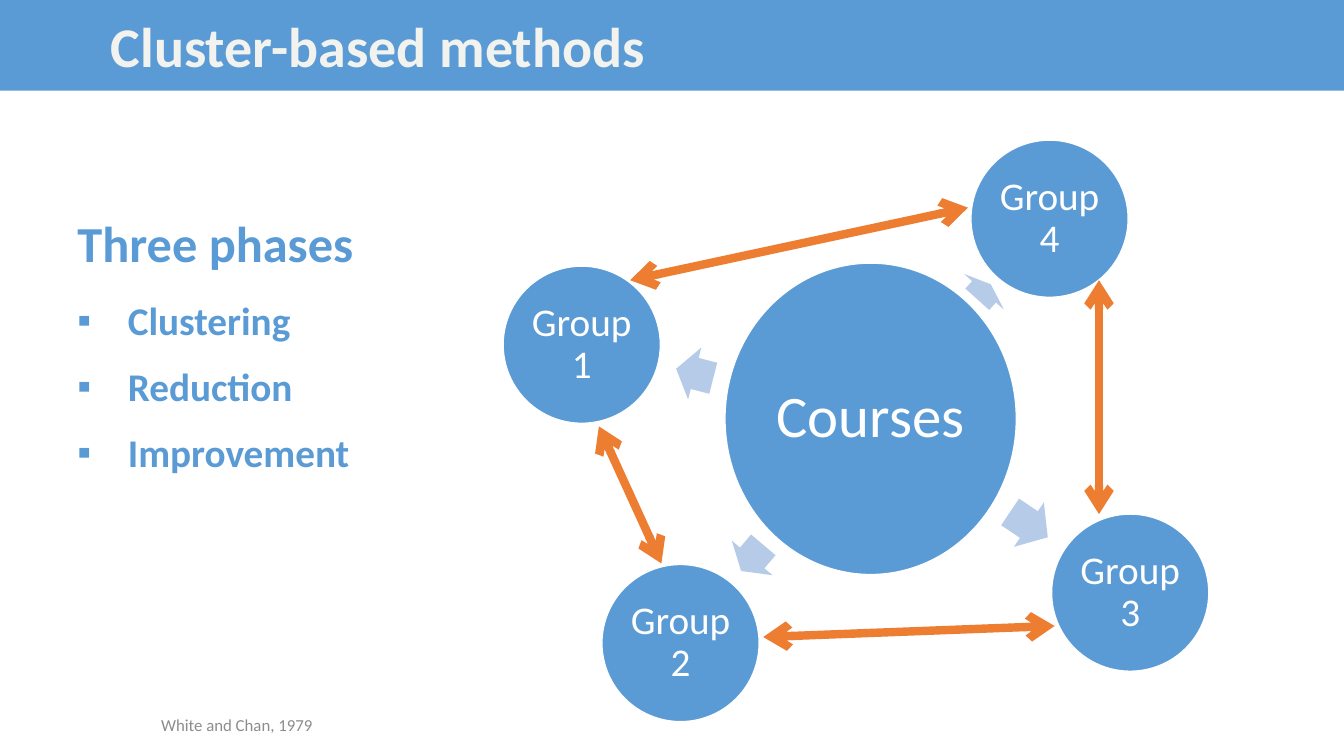
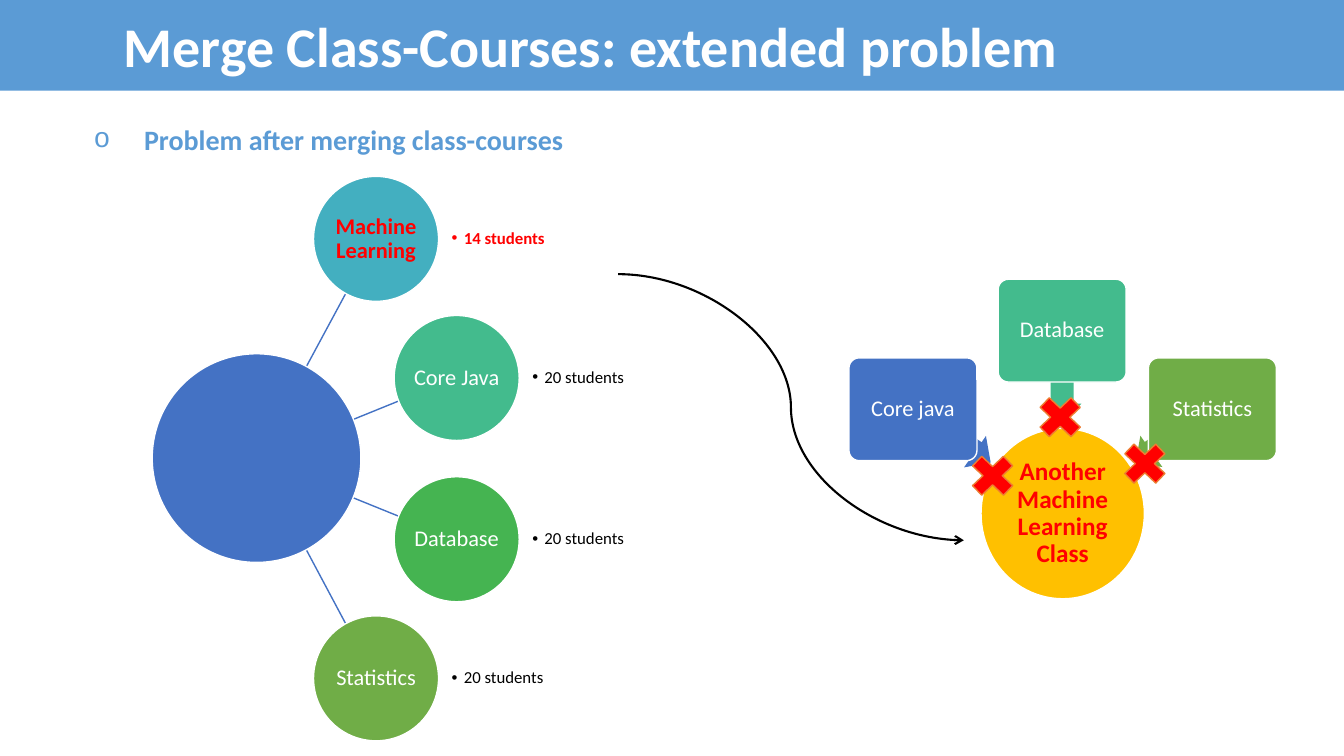
import pptx
import pptx.util
import pptx.dml.color
import pptx.enum.shapes
import pptx.enum.text
import pptx.oxml
import pptx.oxml.ns

Inches, Pt = pptx.util.Inches, pptx.util.Pt
RGB = pptx.dml.color.RGBColor.from_string
SHAPE = pptx.enum.shapes.MSO_SHAPE
CONNECTOR = pptx.enum.shapes.MSO_CONNECTOR
ALIGN = pptx.enum.text.PP_ALIGN
ANCHOR = pptx.enum.text.MSO_ANCHOR


class Theme:
    font = "Calibri"
    # Colours
    blue, pale_blue, royal = "5B9BD5", "B5CBE7", "4472C4"
    teal, mint, green, olive = "43AFC0", "43BB8D", "45B451", "70AD47"
    orange, gold, red = "ED7D31", "FFC000", "FF0000"
    white, off_white, gray, black = "FFFFFF", "F2F2EF", "8C8C8C", "000000"
    # Type sizes
    title, hub, heading, body = 40, 42, 36, 28
    subhead, strong, label, note = 20, 18, 16, 12


def add_block(s, kind, box, text="", size=Theme.label, color=Theme.white, bold=False,
              fill=None, line=None, inset=(0.1, 0.05), align=ALIGN.LEFT,
              anchor=ANCHOR.MIDDLE, spacing=1, after=0, bullet=None, rotation=0, adj=()):
    """Add a shape, or a text box when kind is None; bullet is (char, font, indent)."""
    box = [Inches(v) for v in box]
    if kind is None:
        sp = s.shapes.add_textbox(*box)
    else:
        sp = s.shapes.add_shape(kind, *box)
        sp.shadow.inherit = False
        sp.fill.solid()
        sp.fill.fore_color.rgb = RGB(fill)
        if line:
            sp.line.color.rgb = RGB(line)
            sp.line.width = Pt(1)
        else:
            sp.line.fill.background()
        for i, value in enumerate(adj):
            sp.adjustments[i] = value
    sp.rotation = rotation
    if not text:
        return sp
    tf = sp.text_frame
    tf.word_wrap = True
    tf.vertical_anchor = anchor
    tf.margin_left = tf.margin_right = Inches(inset[0])
    tf.margin_top = tf.margin_bottom = Inches(inset[1])
    tf.text = text
    for p in tf.paragraphs:
        p.alignment = align
        p.line_spacing = spacing
        p.space_after = Pt(after)
        for r in p.runs:
            r.font.name, r.font.size, r.font.bold = Theme.font, Pt(size), bold
            r.font.color.rgb = RGB(color)
        if bullet:
            char, font, indent = bullet
            pPr = p._p.get_or_add_pPr()
            pPr.set("marL", str(Inches(indent)))
            pPr.set("indent", str(-Inches(indent)))
            for tag, key, value in (("a:buFont", "typeface", font), ("a:buChar", "char", char)):
                el = pptx.oxml.ns.qn(tag)
                pPr.append(pPr.makeelement(el, {key: value}))
    return sp


def add_line(s, kind, start, end, color, width, ends=()):
    """Add a connector; ends names the arrowheads: headEnd, tailEnd."""
    c = s.shapes.add_connector(kind, *[Inches(v) for v in start + end])
    c.line.color.rgb = RGB(color)
    c.line.width = Pt(width)
    ln = c.line._get_or_add_ln()
    for tag in ends:
        ln.append(ln.makeelement(pptx.oxml.ns.qn("a:" + tag), {"type": "arrow"}))
    spPr = c._element.spPr
    spPr.append(spPr.makeelement(pptx.oxml.ns.qn("a:effectLst"), {}))


prs = pptx.Presentation()
prs.slide_width, prs.slide_height = Inches(13.33), Inches(7.5)

# Slides with the shared title band
slides = []
for title, color, left in (
    ("Cluster-based methods", Theme.off_white, 1.1),
    ("Merge Class-Courses: extended problem", Theme.white, 1.23),
):
    s = prs.slides.add_slide(prs.slide_layouts[6])
    add_block(s, SHAPE.RECTANGLE, (0, 0, 13.33, 0.9), title, Theme.title, color, True,
              fill=Theme.blue, inset=(left, 0))
    slides.append(s)
methods, problem = slides

# Settings shared by the labels inside diagram nodes
node = dict(line=Theme.white, align=ALIGN.CENTER, spacing=0.9)

# Slide 1: hub and groups
add_block(methods, SHAPE.OVAL, (7.19, 2.61, 2.89, 3.09), "Courses", Theme.hub,
          fill=Theme.blue, inset=(0.06, 0.06), **node)
for box, angle in (
    ((9.66, 2.63, 0.2, 0.53), 311.9),
    ((9.98, 4.94, 0.45, 0.53), 33.9),
    ((7.29, 5.27, 0.34, 0.53), 130.3),
    ((6.7, 3.44, 0.38, 0.53), 194.3),
):
    add_block(methods, SHAPE.RIGHT_ARROW, box, fill=Theme.pale_blue,
              rotation=angle, adj=(0.6, 0.5))
groups = ((4.99, 2.64), (5.97, 5.6), (10.43, 5.1), (9.63, 1.39))
for number, (x, y) in enumerate(groups, 1):
    add_block(methods, SHAPE.OVAL, (x, y, 1.56, 1.56), f"Group {number}", Theme.body,
              fill=Theme.blue, inset=(0.04, 0.04), **node)

# Slide 1: exchanges between groups
for start, end in (
    ((6.25, 2.78), (9.6, 2.06)),
    ((5.94, 4.23), (6.56, 5.59)),
    ((10.9, 2.78), (10.9, 5.1)),
    ((7.57, 6.32), (10.46, 6.21)),
):
    add_line(methods, CONNECTOR.STRAIGHT, start, end, Theme.orange, 6, ("headEnd", "tailEnd"))

# Slide 1: phases and citation
add_block(methods, None, (0.67, 2.06, 3.2, 0.71), "Three phases", Theme.heading,
          Theme.blue, True, anchor=ANCHOR.TOP)
add_block(methods, None, (0.67, 2.89, 3.2, 1.9), "Clustering\nReduction\nImprovement",
          Theme.body, Theme.blue, True, anchor=ANCHOR.TOP, after=13.5,
          bullet=("▪", "Arial", 0.5))
add_block(methods, None, (1.5, 6.99, 4.5, 0.4), "White and Chan, 1979", Theme.note, Theme.gray)

# Slide 2: subheading
add_block(problem, None, (0.83, 1.17, 6.81, 0.44), "Problem after merging class-courses",
          Theme.subhead, Theme.blue, True, anchor=ANCHOR.TOP,
          bullet=("o", "Courier New", 0.5))

# Slide 2: merged class with its courses
for start, end in (
    ((2.94, 5.27), (3.43, 6.19)),
    ((3.26, 4.84), (3.95, 5.12)),
    ((3.26, 4.26), (3.95, 3.98)),
    ((2.94, 3.82), (3.43, 2.91)),
):
    add_line(problem, CONNECTOR.STRAIGHT, start, end, Theme.royal, 1)
add_block(problem, SHAPE.OVAL, (1.51, 3.51, 2.07, 2.07), fill=Theme.royal, line=Theme.white)
for course, count, x, y, fill, alert in (
    ("Machine Learning", 14, 3.11, 1.75, Theme.teal, True),
    ("Core Java", 20, 3.91, 3.13, Theme.mint, False),
    ("Database", 20, 3.91, 4.73, Theme.green, False),
    ("Statistics", 20, 3.11, 6.11, Theme.olive, False),
):
    add_block(problem, SHAPE.OVAL, (x, y, 1.24, 1.24), course, Theme.label,
              Theme.red if alert else Theme.white, alert, fill=fill, inset=(0.01, 0.01), **node)
    add_block(problem, None, (x + 1.37, y, 1.86, 1.24), f"{count} students", Theme.note,
              Theme.red if alert else Theme.black, alert, inset=(0, 0), spacing=0.9,
              bullet=("•", "Arial", 0.12))

# Slide 2: second class and the courses that cannot join it
add_block(problem, SHAPE.OVAL, (9.73, 4.25, 1.62, 1.69), "Another Machine Learning Class",
          Theme.strong, Theme.red, True, fill=Theme.gold, inset=(0.01, 0.01), **node)
for course, x, y, fill, arrow, angle in (
    ("Core java", 8.42, 3.55, Theme.royal, (8.97, 4.13, 0.94, 0.38), 214.9),
    ("Database", 9.9, 2.77, Theme.mint, (10.08, 3.55, 0.91, 0.38), 269.8),
    ("Statistics", 11.39, 3.55, Theme.olive, (11.18, 4.13, 0.93, 0.38), 324.9),
):
    add_block(problem, SHAPE.LEFT_ARROW, arrow, fill=fill, rotation=angle, adj=(0.6, 0.5))
    add_block(problem, SHAPE.ROUNDED_RECTANGLE, (x, y, 1.27, 1.02), course, Theme.label,
              fill=fill, inset=(0.03, 0.03), adj=(0.1,), **node)
add_line(problem, CONNECTOR.CURVE, (6.13, 2.72), (9.56, 5.36), Theme.black, 1.5, ("tailEnd",))

# Slide 2: crosses on the blocked arrows, clear of the class label
for x, y in ((9.55, 4.44), (10.22, 3.86), (11.06, 4.32)):
    add_block(problem, SHAPE.MATH_MULTIPLY, (x, y, 0.59, 0.56), fill=Theme.red, line=Theme.orange)

prs.save("out.pptx")
